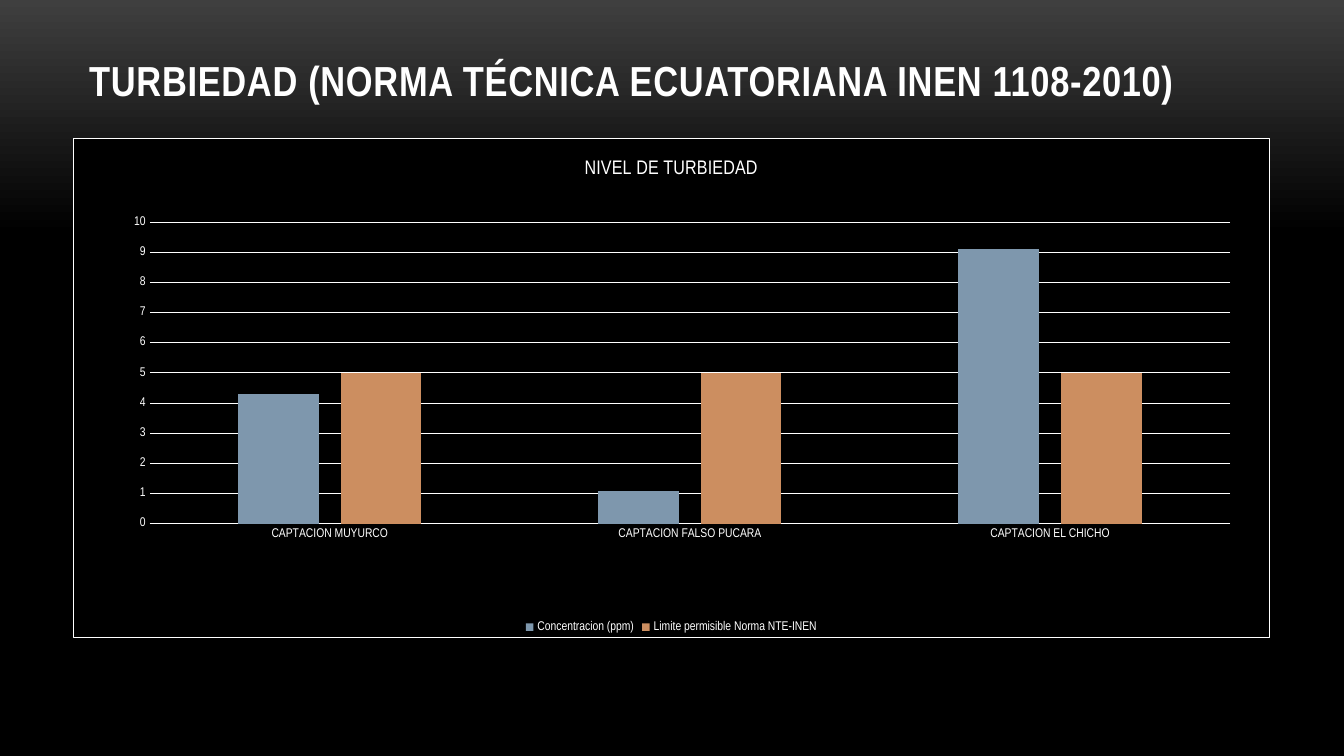
"""Build the turbidity slide: a title above a clustered column chart."""
import pptx
import pptx.chart.data
import pptx.dml.color
import pptx.enum.chart
import pptx.enum.text
import pptx.oxml
import pptx.oxml.ns
import pptx.util

Pt = pptx.util.Pt
RGB = pptx.dml.color.RGBColor.from_string
enums = pptx.enum.chart
FACE = "Arial Narrow"
HUES = {"white": "FFFFFF", "black": "000000", "gray": "3F3F3F",
        "blue": "7E97AD", "orange": "CC8E60"}


def style(font, size, bold=False):
    font.name, font.size, font.bold = FACE, Pt(size), bold
    font.color.rgb = RGB(HUES["white"])


def rule(line):
    line.color.rgb = RGB(HUES["white"])
    line.width = Pt(0.75)


deck = pptx.Presentation()
deck.slide_width = pptx.util.Inches(13.33)
deck.slide_height = pptx.util.Inches(7.5)
wide, high = deck.slide_width, deck.slide_height
slide = deck.slides.add_slide(deck.slide_layouts[6])

back = slide.background.fill
back.gradient()
back.gradient_angle = 270
for stop, (place, hue) in zip(back.gradient_stops, [(0, "gray"), (0.31, "black")]):
    stop.position = place
    stop.color.rgb = RGB(HUES[hue])

box = slide.shapes.add_textbox(
    int(wide * 0.059), int(high * 0.052), int(wide * 0.867), int(high * 0.093))
frame = box.text_frame
frame.word_wrap = True
frame.vertical_anchor = pptx.enum.text.MSO_ANCHOR.BOTTOM
head = frame.paragraphs[0]
head.alignment = pptx.enum.text.PP_ALIGN.JUSTIFY
run = head.add_run()
run.text = "TURBIEDAD (NORMA TÉCNICA ECUATORIANA INEN 1108-2010)"
style(head.font, 30, True)
run.font._element.set("spc", "50")

data = pptx.chart.data.CategoryChartData()
data.categories = ["CAPTACION MUYURCO", "CAPTACION FALSO PUCARA",
                   "CAPTACION EL CHICHO"]
data.add_series("Concentracion (ppm)", [4.3, 1.1, 9.1])
data.add_series("Limite permisible Norma NTE-INEN", [5, 5, 5])
chart = slide.shapes.add_chart(
    enums.XL_CHART_TYPE.COLUMN_CLUSTERED,
    int(wide * 0.054), int(high * 0.183), int(wide * 0.891), int(high * 0.661),
    data).chart
style(chart.font, 10)

chart.has_title = True
title = chart.chart_title.text_frame
title.text = "NIVEL DE TURBIEDAD"
style(title.paragraphs[0].font, 14)

chart.has_legend = True
chart.legend.position = enums.XL_LEGEND_POSITION.BOTTOM
chart.legend.include_in_layout = False
style(chart.legend.font, 9)

plot = chart.plots[0]
plot.gap_width, plot.overlap, plot.vary_by_categories = 219, -27, False
for series, hue in zip(plot.series, ["blue", "orange"]):
    series.format.fill.solid()
    series.format.fill.fore_color.rgb = RGB(HUES[hue])

for axis in (chart.category_axis, chart.value_axis):
    axis.major_tick_mark = axis.minor_tick_mark = enums.XL_TICK_MARK.NONE
    style(axis.tick_labels.font, 9)
rule(chart.category_axis.format.line)
scale = chart.value_axis
scale.minimum_scale, scale.maximum_scale, scale.major_unit = 0, 10, 1
scale.format.line.fill.background()
rule(scale.major_gridlines.format.line)

names = pptx.oxml.ns.nsdecls("c", "a")
root = chart._chartSpace
root.find(pptx.oxml.ns.qn("c:txPr")).addprevious(pptx.oxml.parse_xml(
    f'<c:spPr {names}><a:solidFill><a:srgbClr val="{HUES["black"]}"/></a:solidFill>'
    f'<a:ln w="{Pt(0.75)}"><a:solidFill><a:srgbClr val="{HUES["white"]}"/>'
    '</a:solidFill></a:ln></c:spPr>'))
area = root.chart.plotArea
for old in area.findall(pptx.oxml.ns.qn("c:layout")):
    area.remove(old)
modes = '<c:layoutTarget val="inner"/><c:xMode val="edge"/><c:yMode val="edge"/>'
sides = "".join(f'<c:{key} val="{share}"/>' for key, share in
                [("x", 0.064), ("y", 0.167), ("w", 0.903), ("h", 0.605)])
area.insert(0, pptx.oxml.parse_xml(
    f'<c:layout {names}><c:manualLayout>{modes}{sides}</c:manualLayout></c:layout>'))

deck.save("out.pptx")
